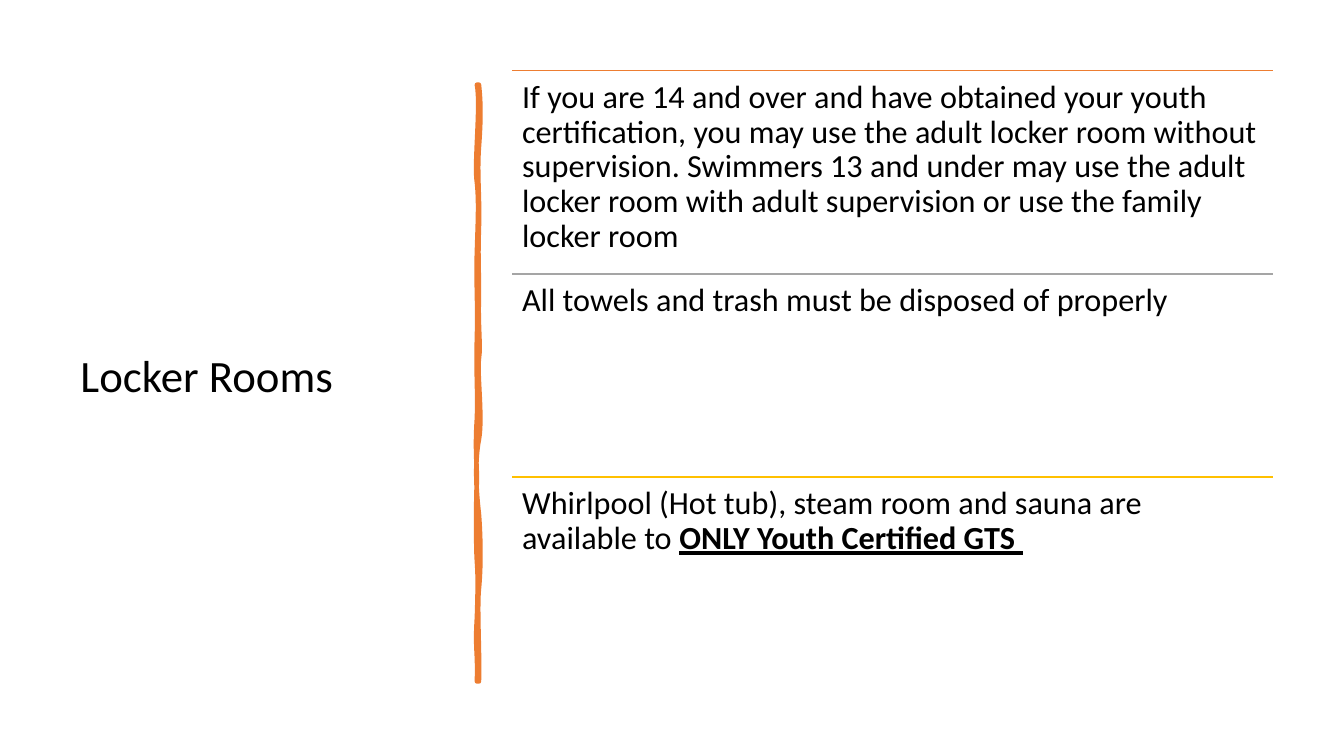
from lxml import etree
from pptx import Presentation
from pptx.dml.color import RGBColor
from pptx.enum.shapes import MSO_CONNECTOR
from pptx.enum.text import MSO_ANCHOR
from pptx.oxml.ns import qn
from pptx.util import Inches, Pt

STRAIGHT = MSO_CONNECTOR.STRAIGHT
TOP, MIDDLE = MSO_ANCHOR.TOP, MSO_ANCHOR.MIDDLE
FONT = "Calibri"
COLORS = {"text": "000000", "orange": "ED7D31", "gray": "A5A5A5", "gold": "FFC000"}

# Boxes: left, top, width, height in inches
TITLE_BOX = (0.7, 0.69, 3.74, 6.11)
DIVIDER_BOX = (4.73, 0.84, 0.02, 5.92)
RULES_BOX = (5.08, 0.7, 7.55, 6.05)

RULES = [
    ("orange", [("If you are 14 and over and have obtained your youth certification, "
                 "you may use the adult locker room without supervision. Swimmers 13 "
                 "and under may use the adult locker room with adult supervision or "
                 "use the family locker room", False)]),
    ("gray", [("All towels and trash must be disposed of properly", False)]),
    ("gold", [("Whirlpool (Hot tub), steam room and sauna are available to ", False),
              ("ONLY Youth Certified GTS ", True)]),
]

# Wavy edges, one curve a row: sway and depth of both handles, then depth of the end
RIGHT_EDGE = [
    (0.02, 0.18, 0.02, 0.35, 0.62), (-0.02, 0.89, 0.01, 1.11, 1.42),
    (-0.01, 1.73, 0, 1.78, 2.1), (-0.01, 2.41, 0.02, 2.58, 2.72),
    (-0.02, 2.86, 0.04, 3.3, 3.52), (-0.04, 3.73, -0.03, 4, 4.26),
    (0.02, 4.52, 0.02, 4.8, 5), (-0.02, 5.19, 0.01, 5.66, 5.92),
]
LEFT_EDGE = [
    (0.01, 5.62, -0.02, 5.6, 5.29), (0.01, 4.99, 0.01, 4.86, 4.73),
    (-0.01, 4.6, -0.01, 4.11, 3.93), (0, 3.75, -0.02, 3.61, 3.31),
    (0.01, 3.02, -0.01, 2.89, 2.51), (0.01, 2.14, -0.01, 1.97, 1.66),
    (0.01, 1.34, 0.02, 1.16, 0.97), (-0.03, 0.79, 0.04, 0.2, 0),
]


def rgb(name):
    return RGBColor.from_string(COLORS[name])


def add_text(s, box, runs, size=23, anchor=TOP, inset_y=0.1):
    tf = s.shapes.add_textbox(*map(Inches, box)).text_frame
    tf.word_wrap = True
    tf.vertical_anchor = anchor
    tf.margin_left = tf.margin_right = Inches(0.1)
    tf.margin_top = tf.margin_bottom = Inches(inset_y)
    p = tf.paragraphs[0]
    p.line_spacing = 0.9
    for text, strong in runs:
        r = p.add_run()
        r.text = text
        r.font.name, r.font.size = FONT, Pt(size)
        r.font.color.rgb = rgb("text")
        if strong:
            r.font.bold = r.font.underline = True


def edge_points(x, curves):
    """Two handles and an end point for each curve of an edge at x."""
    return [point for sway1, y1, sway2, y2, end in curves
            for point in ((x + sway1, y1), (x + sway2, y2), (x, end))]


def curve_segments(sp):
    """Turn each three straight segments of a freeform into one curve."""
    segments = list(sp._element.iter(qn("a:lnTo")))
    for first, second, third in zip(*[iter(segments)] * 3):
        curve = etree.Element(qn("a:cubicBezTo"))
        first.addprevious(curve)
        for segment in (first, second, third):
            curve.append(segment[0])
            segment.getparent().remove(segment)


def add_divider(s, box):
    left, top, width, height = box
    points = edge_points(width, RIGHT_EDGE)
    points += [(width / 2, height), (0, height), (0, height)]
    points += edge_points(0, LEFT_EDGE)
    builder = s.shapes.build_freeform(Inches(left + width), Inches(top))
    builder.add_line_segments(
        [(Inches(left + x), Inches(top + y)) for x, y in points], close=True)
    sp = builder.convert_to_shape()
    curve_segments(sp)
    sp.shadow.inherit = False
    sp.fill.solid()
    sp.fill.fore_color.rgb = rgb("orange")
    sp.line.color.rgb = rgb("orange")
    sp.line.width = Pt(3.25)
    # Round joins
    etree.SubElement(sp._element.spPr.find(qn("a:ln")), qn("a:round"))


def add_rules(s, box):
    left, top, width, height = box
    row_h = height / len(RULES)
    for i, (color, runs) in enumerate(RULES):
        y = top + i * row_h
        line = s.shapes.add_connector(
            STRAIGHT, *map(Inches, (left, y, left + width, y)))
        line.line.color.rgb = rgb(color)
        line.line.width = Pt(1)
        etree.SubElement(line._element.spPr, qn("a:effectLst"))
        add_text(s, (left, y, width, row_h), runs)


def main():
    prs = Presentation()
    prs.slide_width, prs.slide_height = Inches(13.33), Inches(7.5)
    s = prs.slides.add_slide(prs.slide_layouts[6])
    # Title on the left, divider, rules on the right
    add_text(s, TITLE_BOX, [("Locker Rooms", False)], size=32, anchor=MIDDLE, inset_y=0.05)
    add_divider(s, DIVIDER_BOX)
    add_rules(s, RULES_BOX)
    prs.save("out.pptx")


if __name__ == "__main__":
    main()
